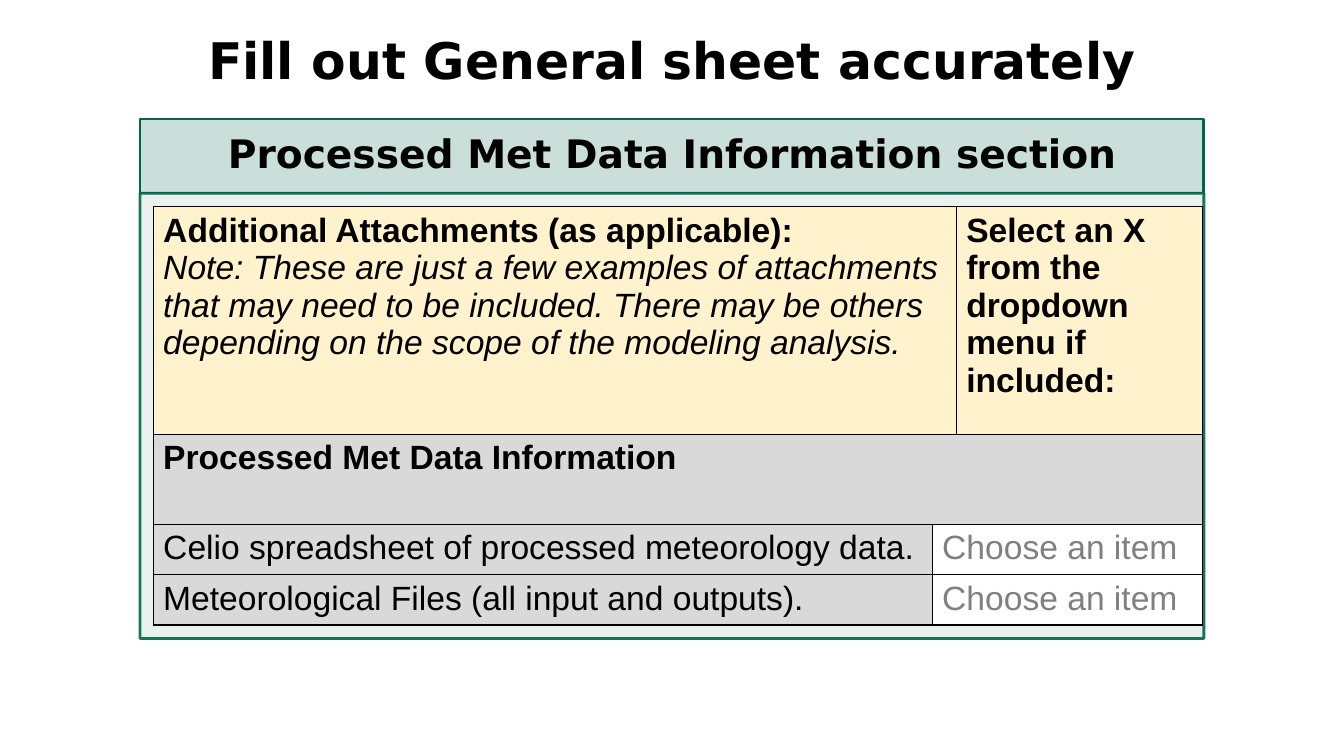
from lxml.etree import SubElement
from pptx import Presentation
from pptx.dml.color import RGBColor
from pptx.enum.shapes import MSO_SHAPE
from pptx.enum.text import MSO_ANCHOR, PP_ALIGN
from pptx.oxml.ns import qn
from pptx.util import Cm, Pt

BLACK, GREY_TEXT = "000000", "808080"
CREAM, GREY, WHITE = "FFF2CC", "D9D9D9", "FFFFFF"
PANEL_LEFT, PANEL_WIDTH = Cm(3.53), Cm(26.81)


def color(value):
    return RGBColor.from_string(value)


def write(frame, text, size, name, bold=False, italic=False, ink=BLACK, first=True):
    """Write one paragraph into the frame, in its first paragraph or a new one."""
    para = frame.paragraphs[0] if first else frame.add_paragraph()
    para.text = text
    font = para.font
    font.size, font.name = Pt(size), name
    font.bold, font.italic = bold, italic
    font.color.rgb = color(ink)
    return para


deck = Presentation()
deck.slide_width, deck.slide_height = Cm(33.87), Cm(19.05)
page = deck.slides.add_slide(deck.slide_layouts[6])

# Title, section heading and panel
title = page.shapes.add_textbox(0, Cm(0.43), deck.slide_width, Cm(2.34))
heading = page.shapes.add_shape(
    MSO_SHAPE.RECTANGLE, PANEL_LEFT, Cm(3), PANEL_WIDTH, Cm(1.87))
panel = page.shapes.add_shape(
    MSO_SHAPE.RECTANGLE, PANEL_LEFT, Cm(4.87), PANEL_WIDTH, Cm(11.22))

for shape, fill in ((heading, "CADFD9"), (panel, "E7F1EE")):
    shape.shadow.inherit = False
    shape.fill.solid()
    shape.fill.fore_color.rgb = color(fill)
    shape.line.color.rgb = color("01654B")
    shape.line.width = Pt(2)
for tint in panel._element.spPr.iter(qn("a:srgbClr")):
    SubElement(tint, qn("a:alpha"), val="90000")

for box, text, size in (
    (title, "Fill out General sheet accurately", 36),
    (heading, "Processed Met Data Information section", 28),
):
    frame = box.text_frame
    frame.word_wrap = True
    frame.vertical_anchor = MSO_ANCHOR.MIDDLE
    para = write(frame, text, size, "DejaVu Sans", bold=True)
    para.alignment = PP_ALIGN.CENTER
    para.line_spacing = 0.9

# Attachments table
widths = [Cm(19.63), Cm(0.33), Cm(6.2)]
heights = [Cm(5.74), Cm(2.26), Cm(1.12), Cm(1.12)]
table = page.shapes.add_table(
    len(heights), len(widths), Cm(3.86), Cm(5.21), sum(widths), sum(heights)).table
table.first_row = table.horz_banding = False
for column, width in zip(table.columns, widths):
    column.width = width
for row, height in zip(table.rows, heights):
    row.height = height

# First and last column of each merged area
for row, start, end in ((0, 0, 1), (1, 0, 2), (2, 1, 2), (3, 1, 2)):
    table.cell(row, start).merge(table.cell(row, end))

row_fills = [[CREAM] * 3, [GREY] * 3, [GREY, WHITE, WHITE], [GREY, WHITE, WHITE]]
for row, fills in enumerate(row_fills):
    for column, fill in enumerate(fills):
        cell = table.cell(row, column)
        cell.fill.solid()
        cell.fill.fore_color.rgb = color(fill)
        properties = cell._tc.get_or_add_tcPr()
        for position, side in enumerate(("lnL", "lnR", "lnT", "lnB")):
            border = SubElement(properties, qn(f"a:{side}"), w=str(Pt(1)))
            solid = SubElement(border, qn("a:solidFill"))
            SubElement(solid, qn("a:srgbClr"), val=BLACK)
            properties.insert(position, border)

BOLD, ITALIC, MUTED = {"bold": True}, {"italic": True}, {"ink": GREY_TEXT}
cell_texts = [
    (0, 0, [("Additional Attachments (as applicable):", BOLD),
            ("Note: These are just a few examples of attachments that may need to be "
             "included. There may be others depending on the scope of the modeling "
             "analysis.", ITALIC)]),
    (0, 2, [("Select an X from the dropdown menu if included:", BOLD)]),
    (1, 0, [("Processed Met Data Information", BOLD)]),
    (2, 0, [("Celio spreadsheet of processed meteorology data.", {})]),
    (2, 1, [("Choose an item", MUTED)]),
    (3, 0, [("Meteorological Files (all input and outputs).", {})]),
    (3, 1, [("Choose an item", MUTED)]),
]
for row, column, lines in cell_texts:
    frame = table.cell(row, column).text_frame
    for index, (text, style) in enumerate(lines):
        write(frame, text, 24, "Arial", first=index == 0, **style)

deck.save("out.pptx")
